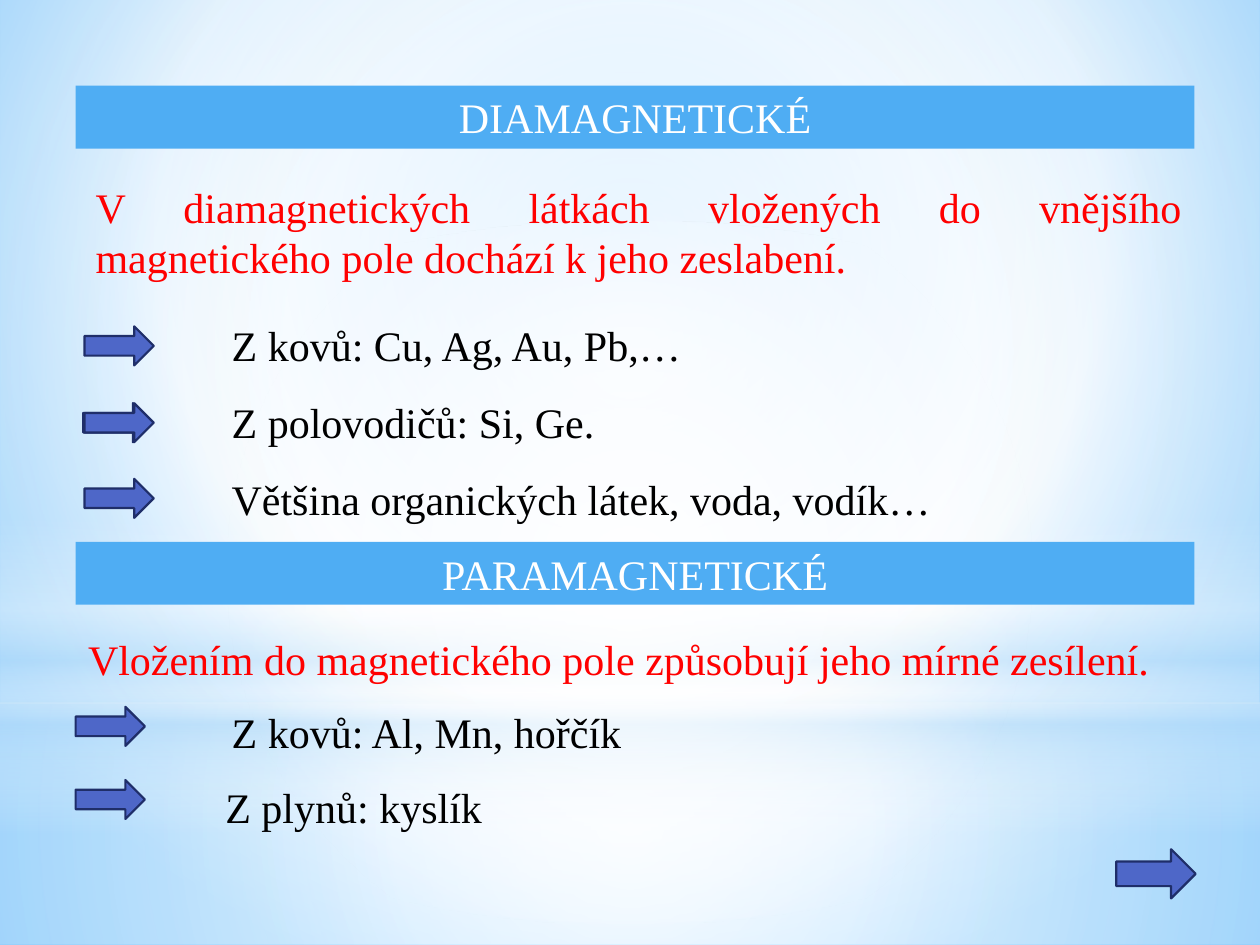
from lxml import etree
from pptx import Presentation
from pptx.dml.color import RGBColor
from pptx.enum.shapes import MSO_SHAPE
from pptx.enum.text import MSO_ANCHOR, MSO_AUTO_SIZE, PP_ALIGN
from pptx.oxml.ns import qn
from pptx.util import Inches, Pt

RECT, OVAL, ARROW = MSO_SHAPE.RECTANGLE, MSO_SHAPE.OVAL, MSO_SHAPE.RIGHT_ARROW
LEFT, CENTER, JUSTIFY = PP_ALIGN.LEFT, PP_ALIGN.CENTER, PP_ALIGN.JUSTIFY
MIDDLE, GROW = MSO_ANCHOR.MIDDLE, MSO_AUTO_SIZE.SHAPE_TO_FIT_TEXT

FONT, SIZE = "Times New Roman", 24
WHITE, BLACK, RED = "FFFFFF", "000000", "FF0000"
SKY, BLUE, NAVY, PALE = "4FADF3", "4E67C8", "1F2E69", "B4DCFA"
ROW = 0.5
MID = (50, 50, 50, 50)

# Gradient stops: position %, colour, opacity %
BACK = [(0, "9ED5FF", 100), (60, WHITE, 100), (100, "5BB9FF", 100)]
# Shape, box, stops, centre of the circle (None: runs downwards)
GLOWS = [
    (RECT, (0, 5.58, 10, 1.92), [(0, WHITE, 91), (37, WHITE, 76), (100, PALE, 79)], MID),
    (RECT, (0, 0, 10, 5.58), [(0, WHITE, 89), (48, WHITE, 62), (100, PALE, 79)], MID),
    (RECT, (0, 4.12, 10, 2.5), [(0, WHITE, 0), (29, WHITE, 30), (45, PALE, 40),
                                (55, WHITE, 26), (65, PALE, 60), (100, WHITE, 0)], None),
    (OVAL, (0, 1.75, 10, 5.58), [(0, WHITE, 100), (56, WHITE, 0)], MID),
]
BARS = [("DIAMAGNETICKÉ", 0.68), ("PARAMAGNETICKÉ", 4.3)]
RULES = [
    ("V diamagnetických látkách vložených do vnějšího magnetického pole "
     "dochází k jeho zeslabení.", (0.66, 1.39, 8.82, 0.91), JUSTIFY),
    ("Vložením do magnetického pole způsobují jeho mírné zesílení.",
     (0.6, 4.98, 8.89, ROW), LEFT),
]
# Text, left, top
ITEMS = [
    ("Z kovů: Cu, Ag, Au, Pb,…", 1.74, 2.49),
    ("Z polovodičů: Si, Ge.", 1.74, 3.1),
    ("Většina organických látek, voda, vodík…", 1.74, 3.71),
    ("Z kovů: Al, Mn, hořčík", 1.74, 5.56),
    ("Z plynů: kyslík", 1.69, 6.15),
]
MARKS = [(0.67, 2.59), (0.66, 3.2), (0.67, 3.2), (0.67, 3.8), (0.6, 5.61), (0.6, 6.19)]
NEXT = (8.86, 6.74, 0.63, 0.39)


def color(code):
    return RGBColor.from_string(code)


def blend(owner, fill, stops, focus):
    """Give the fill found inside owner a gradient with opacity per stop."""
    fill.gradient()
    grad = owner.element.xpath(".//a:gradFill")[0]
    grad.clear()
    group = etree.SubElement(grad, qn("a:gsLst"))
    for pos, code, alpha in stops:
        stop = etree.SubElement(group, qn("a:gs"), pos=str(pos * 1000))
        tint = etree.SubElement(stop, qn("a:srgbClr"), val=code)
        if alpha < 100:
            etree.SubElement(tint, qn("a:alpha"), val=str(alpha * 1000))
    if focus:
        ring = etree.SubElement(grad, qn("a:path"), path="circle")
        sides = {side: str(part * 1000) for side, part in zip("ltrb", focus)}
        etree.SubElement(ring, qn("a:fillToRect"), **sides)
    else:
        etree.SubElement(grad, qn("a:lin"), ang="5400000", scaled="0")


def draw(slide, kind, box, fill=None, line=None):
    shape = slide.shapes.add_shape(kind, *map(Inches, box))
    shape.shadow.inherit = False
    if fill:
        shape.fill.solid()
        shape.fill.fore_color.rgb = color(fill)
    if line:
        shape.line.color.rgb = color(line)
        shape.line.width = Pt(1.25)
    else:
        shape.line.fill.background()
    return shape


def write(shape, text, ink=BLACK, align=LEFT, anchor=None):
    frame = shape.text_frame
    frame.word_wrap = True
    frame.auto_size = GROW
    if anchor is not None:
        frame.vertical_anchor = anchor
    para = frame.paragraphs[0]
    para.alignment = align
    run = para.add_run()
    run.text = text
    run.font.name, run.font.size = FONT, Pt(SIZE)
    run.font.color.rgb = color(ink)


def label(slide, text, box, **style):
    write(slide.shapes.add_textbox(*map(Inches, box)), text, **style)


def main():
    deck = Presentation()
    deck.slide_width, deck.slide_height = Inches(10), Inches(7.5)
    slide = deck.slides.add_slide(deck.slide_layouts[6])

    blend(slide, slide.background.fill, BACK, (20, 10, 20, 60))
    for kind, box, stops, focus in GLOWS:
        glow = draw(slide, kind, box)
        blend(glow, glow.fill, stops, focus)

    for text, top in BARS:
        bar = draw(slide, RECT, (0.6, top, 8.88, ROW), SKY)
        write(bar, text, ink=WHITE, align=CENTER, anchor=MIDDLE)
    for text, box, align in RULES:
        label(slide, text, box, ink=RED, align=align)
    for text, left, top in ITEMS:
        label(slide, text, (left, top, 7.75, ROW))
    for box in [(*spot, 0.55, 0.31) for spot in MARKS] + [NEXT]:
        draw(slide, ARROW, box, BLUE, NAVY)

    deck.save("out.pptx")


if __name__ == "__main__":
    main()
